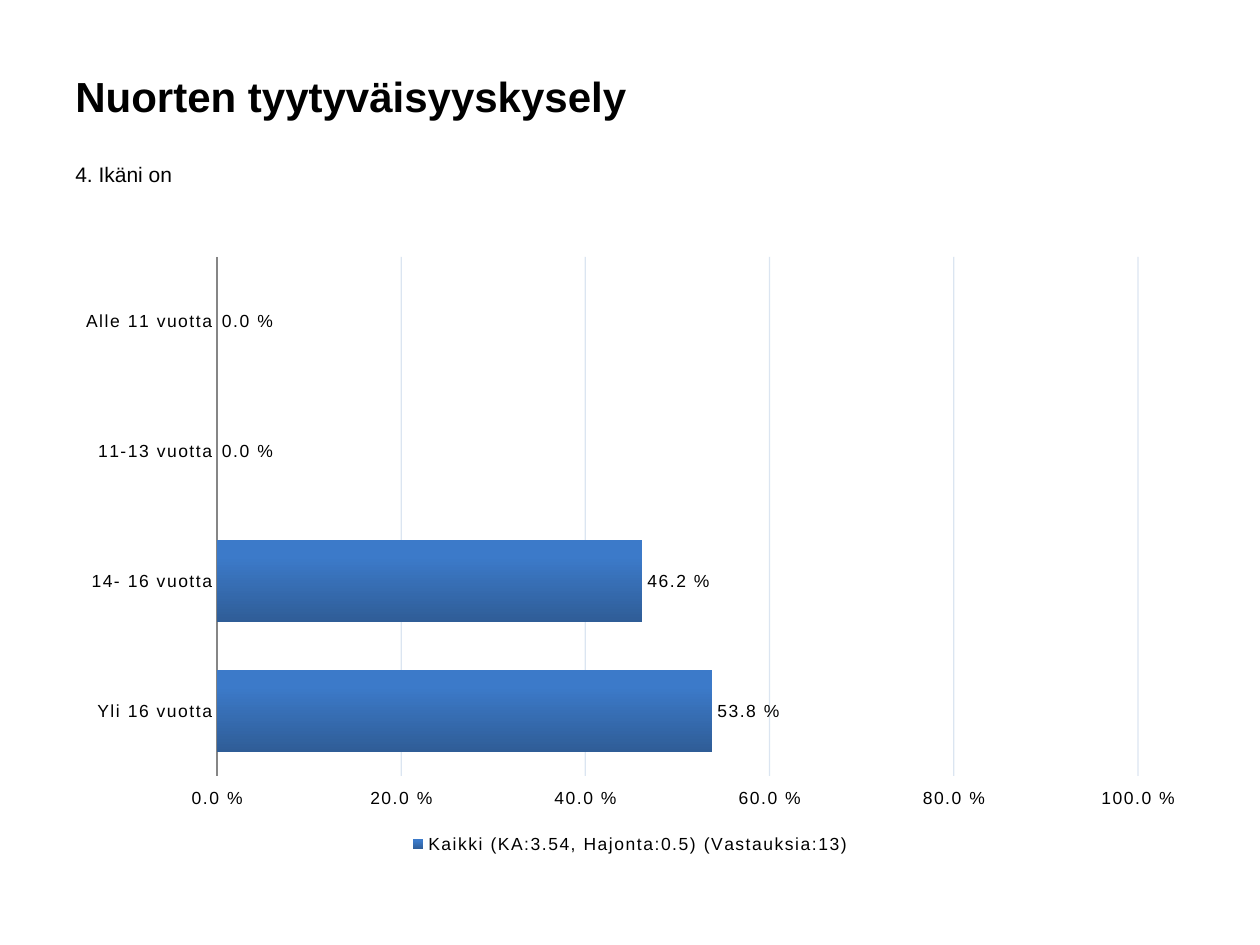
from lxml.etree import SubElement
from pptx import Presentation
from pptx.chart.data import CategoryChartData
from pptx.dml.color import RGBColor
from pptx.enum.chart import (XL_CHART_TYPE, XL_LABEL_POSITION, XL_LEGEND_POSITION,
                             XL_TICK_LABEL_POSITION, XL_TICK_MARK)
from pptx.enum.text import MSO_ANCHOR
from pptx.oxml import parse_xml
from pptx.oxml.ns import nsdecls, qn
from pptx.util import Emu, Pt

PX_PER_INCH = 126
BLACK = RGBColor(0x00, 0x00, 0x00)
AXIS_GRAY = RGBColor(0x86, 0x86, 0x86)
GRID_BLUE = RGBColor(0x4F, 0x81, 0xBD)
BAR_TOP = RGBColor(0x3C, 0x7A, 0xC9)
BAR_BOTTOM = RGBColor(0x2F, 0x5D, 0x97)
FONT = "Arial"
PERCENT = r"0.0\ %"
CHART_BOX = (63, 244, 1134, 615)
PLOT_BOX = (217, 257, 921, 519)
AGE_SHARES = {
    "Alle 11 vuotta": 0,
    "11-13 vuotta": 0,
    "14- 16 vuotta": 0.462,
    "Yli 16 vuotta": 0.538,
}


def px(length):
    return Emu(round(length * 914400 / PX_PER_INCH))


def style_font(font, size, bold=False):
    font.name = FONT
    font.size = Pt(size)
    font.bold = bold
    font.color.rgb = BLACK


def add_text(slide, bounds, text, size, bold=False, anchor=MSO_ANCHOR.TOP, before=0):
    box = slide.shapes.add_textbox(*map(px, bounds))
    frame = box.text_frame
    frame.word_wrap = True
    frame.vertical_anchor = anchor
    para = frame.paragraphs[0]
    para.space_before = Pt(before)
    span = para.add_run()
    span.text = text
    style_font(span.font, size, bold)


def style_axis(axis):
    axis.major_tick_mark = XL_TICK_MARK.NONE
    axis.minor_tick_mark = XL_TICK_MARK.NONE
    style_font(axis.tick_labels.font, 10)


def style_category_axis(axis):
    style_axis(axis)
    axis.reverse_order = True
    axis.format.line.color.rgb = AXIS_GRAY
    axis.format.line.width = Pt(0.75)


def style_value_axis(axis):
    style_axis(axis)
    axis.tick_label_position = XL_TICK_LABEL_POSITION.HIGH
    axis.minimum_scale = 0
    axis.maximum_scale = 1
    axis.major_unit = 0.2
    axis.tick_labels.number_format = PERCENT
    axis.tick_labels.number_format_is_linked = False
    axis.format.line.fill.background()
    grid = axis.major_gridlines.format.line
    grid.color.rgb = GRID_BLUE
    grid.width = Pt(0.75)
    for color in axis.major_gridlines._xAx.iterfind(
            f"{qn('c:majorGridlines')}//{qn('a:srgbClr')}"):
        SubElement(color, qn("a:alpha"), val="20000")


def style_bars(plot):
    plot.gap_width = 58
    plot.vary_by_categories = False
    fill = plot.series[0].format.fill
    fill.gradient()
    fill.gradient_angle = 90
    for stop, color, position in zip(fill.gradient_stops, (BAR_BOTTOM, BAR_TOP), (0, 0.8)):
        stop.color.rgb = color
        stop.position = position
    labels = plot.series[0].data_labels
    labels.show_value = True
    labels.number_format = PERCENT
    labels.number_format_is_linked = False
    labels.position = XL_LABEL_POSITION.OUTSIDE_END
    style_font(labels.font, 10)


def place_plot(chart):
    left, top, width, height = CHART_BOX
    inner_left, inner_top, inner_width, inner_height = PLOT_BOX
    shares = {
        "x": (inner_left - left) / width,
        "y": (inner_top - top) / height,
        "w": inner_width / width,
        "h": inner_height / height,
    }
    modes = "".join(f'<c:{key}Mode val="edge"/>' for key in "xy")
    sizes = "".join(f'<c:{key} val="{share:.4f}"/>' for key, share in shares.items())
    layout = parse_xml(
        f'<c:layout {nsdecls("c")}><c:manualLayout><c:layoutTarget val="inner"/>'
        f"{modes}{sizes}</c:manualLayout></c:layout>")
    area = chart._chartSpace.chart.plotArea
    for present in area.findall(qn("c:layout")):
        area.remove(present)
    area.insert(0, layout)


def space_letters(chart):
    for properties in chart._chartSpace.iter(qn("a:defRPr")):
        properties.set("spc", "100")


def add_age_chart(slide):
    data = CategoryChartData(number_format=PERCENT)
    data.categories = list(AGE_SHARES)
    data.add_series("Kaikki (KA:3.54, Hajonta:0.5) (Vastauksia:13)", AGE_SHARES.values())
    chart = slide.shapes.add_chart(
        XL_CHART_TYPE.BAR_CLUSTERED, *map(px, CHART_BOX), data).chart
    chart.has_title = False
    style_font(chart.font, 10)
    style_category_axis(chart.category_axis)
    style_value_axis(chart.value_axis)
    style_bars(chart.plots[0])
    chart.has_legend = True
    chart.legend.position = XL_LEGEND_POSITION.BOTTOM
    chart.legend.include_in_layout = False
    style_font(chart.legend.font, 10)
    place_plot(chart)
    space_letters(chart)


def main():
    deck = Presentation()
    deck.slide_width = px(1260)
    deck.slide_height = px(945)
    page = deck.slides.add_slide(deck.slide_layouts[6])
    add_text(page, (63, 46, 1134, 100), "Nuorten tyytyväisyyskysely", 24,
             bold=True, anchor=MSO_ANCHOR.MIDDLE)
    add_text(page, (63, 155, 1134, 74), "4. Ikäni on", 12, before=2.4)
    add_age_chart(page)
    deck.save("out.pptx")


if __name__ == "__main__":
    main()
